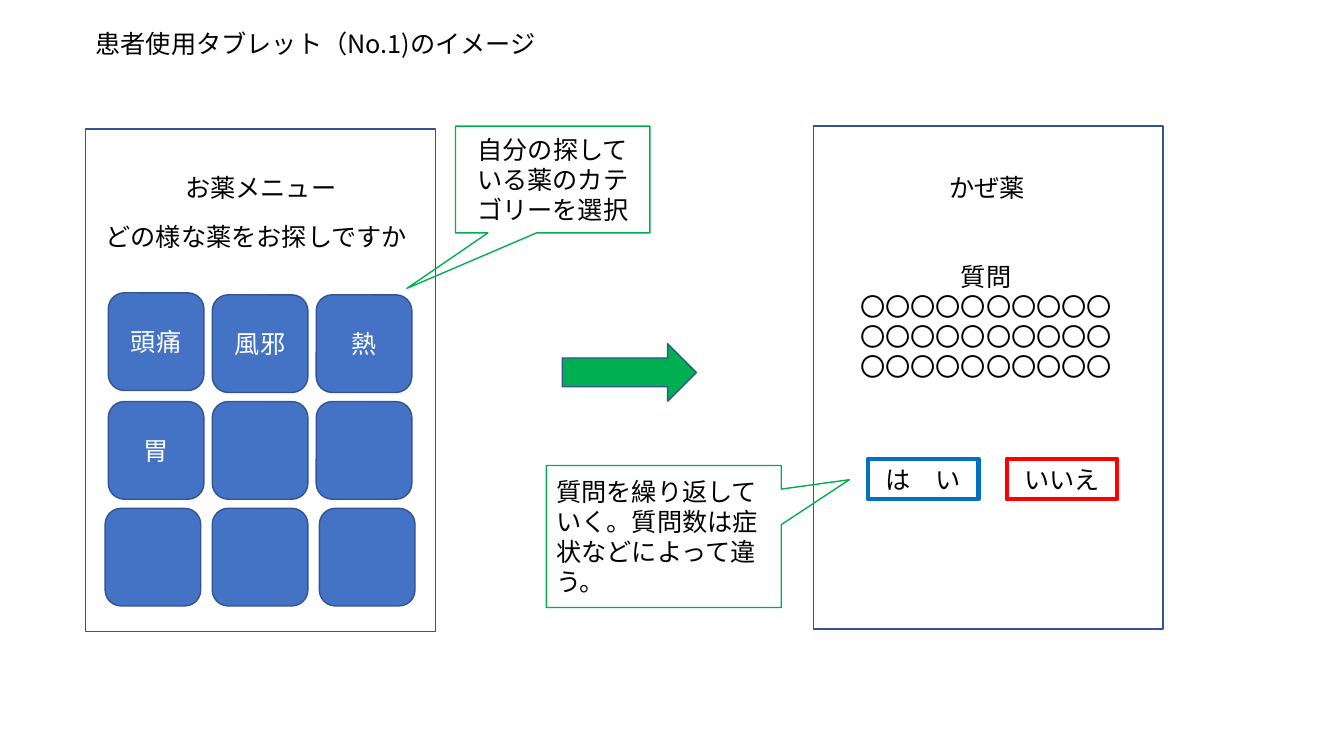
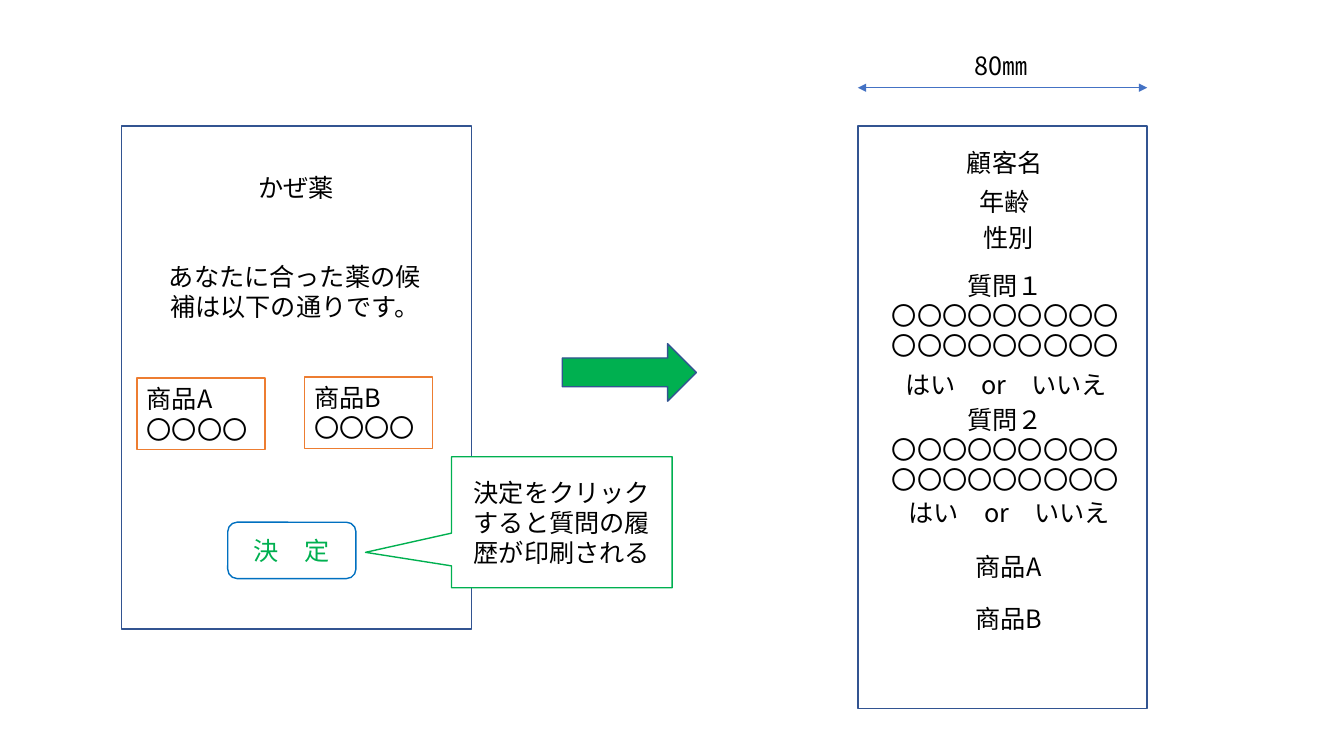
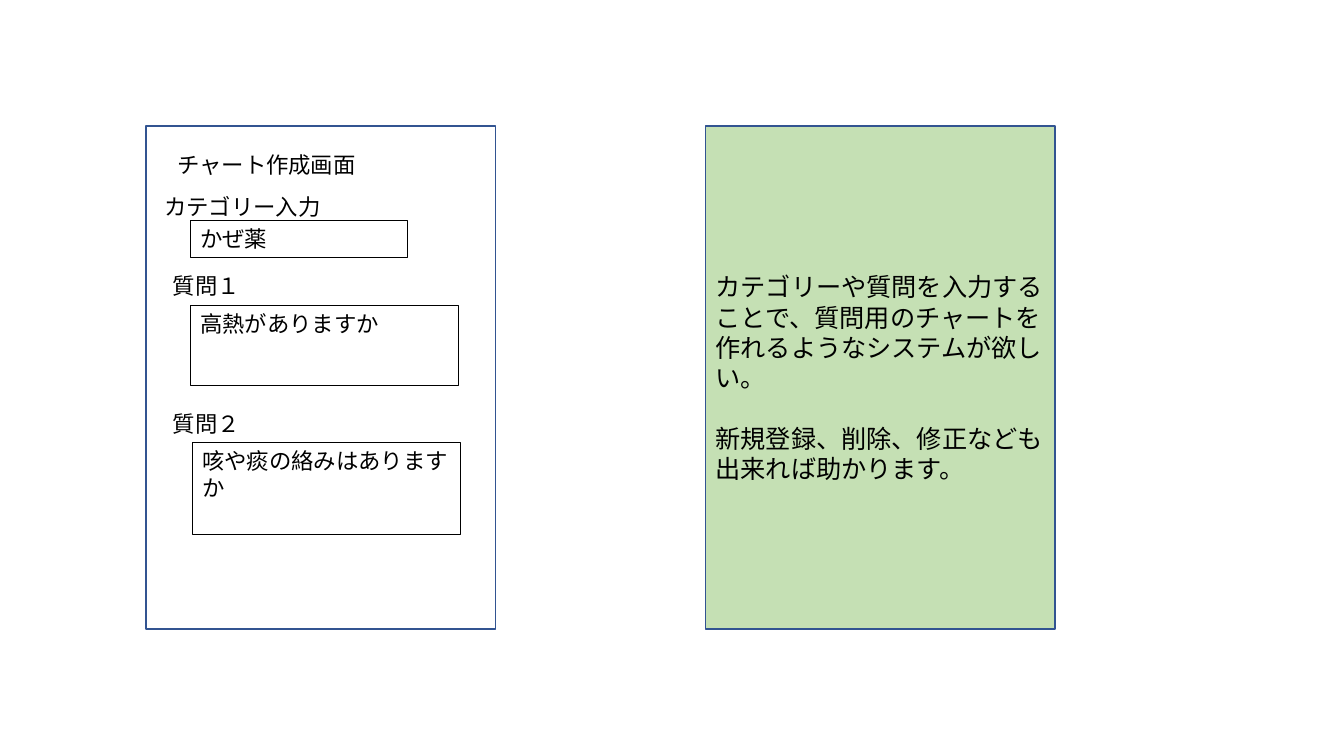
from dataclasses import dataclass
from typing import Optional

from lxml.etree import SubElement
from pptx import Presentation
from pptx.dml.color import RGBColor
from pptx.enum.shapes import MSO_CONNECTOR as Connector, MSO_SHAPE as Preset
from pptx.enum.text import MSO_ANCHOR as Anchor, PP_ALIGN as Align
from pptx.oxml.ns import qn
from pptx.slide import Slide
from pptx.util import Cm, Pt

FONT = "Noto Sans CJK JP"
BLACK = RGBColor(0x00, 0x00, 0x00)
WHITE = RGBColor(0xFF, 0xFF, 0xFF)
BLUE = RGBColor(0x44, 0x72, 0xC4)
NAVY = RGBColor(0x32, 0x54, 0x91)
SKY = RGBColor(0x00, 0x70, 0xC0)
GREEN = RGBColor(0x00, 0xB0, 0x50)
PALE_GREEN = RGBColor(0xC5, 0xE0, 0xB4)
RED = RGBColor(0xFF, 0x00, 0x00)
ORANGE = RGBColor(0xED, 0x7D, 0x31)

BODY_SIZE, FORM_SIZE = 18, 16
LINE_FACTOR = 1.2
LABEL_HEIGHT = 1.02
SCREEN_TOP, SCREEN_WIDTH, SCREEN_HEIGHT = 3.18, 8.81, 12.67


@dataclass
class Block:
    """A shape or, without a preset, a text box; lengths in centimetres."""
    left: float
    top: float
    width: float
    height: float = LABEL_HEIGHT
    text: str = ""
    align: Align = Align.CENTER
    size: int = BODY_SIZE
    color: RGBColor = BLACK
    preset: Optional[Preset] = None
    anchor: Anchor = Anchor.MIDDLE
    fill: Optional[RGBColor] = None
    line: RGBColor = NAVY
    weight: float = 1
    tip: Optional[tuple[float, float]] = None
    paragraph_gap: float = 0


def write_text(shape, block: Block) -> None:
    frame = shape.text_frame
    frame.word_wrap = True
    frame.vertical_anchor = block.anchor if block.preset else Anchor.TOP
    frame.text = block.text
    for number, paragraph in enumerate(frame.paragraphs):
        paragraph.alignment = block.align
        paragraph.line_spacing = Pt(block.size * LINE_FACTOR)
        if number and block.paragraph_gap:
            paragraph.space_before = Pt(block.paragraph_gap)
        for run in paragraph.runs:
            run.font.name = FONT
            run.font.size = Pt(block.size)
            run.font.color.rgb = block.color
            SubElement(run.font._element, qn("a:ea"), typeface=FONT)


def draw(slide: Slide, *blocks: Block) -> None:
    for block in blocks:
        place = [Cm(n) for n in (block.left, block.top, block.width, block.height)]
        if block.preset is None:
            shape = slide.shapes.add_textbox(*place)
        else:
            shape = slide.shapes.add_shape(block.preset, *place)
            shape.shadow.inherit = False
            shape.line.color.rgb = block.line
            shape.line.width = Pt(block.weight)
            if block.fill is None:
                shape.fill.background()
            else:
                shape.fill.solid()
                shape.fill.fore_color.rgb = block.fill
            if block.tip:
                shape.adjustments[0], shape.adjustments[1] = block.tip
        if block.text:
            write_text(shape, block)


def screen(left: float, top: float = SCREEN_TOP, **options) -> Block:
    return Block(left, top, SCREEN_WIDTH, SCREEN_HEIGHT,
                 preset=Preset.RECTANGLE, **options)


def callout(left: float, top: float, width: float, height: float, text: str,
            tip: tuple[float, float], **options) -> Block:
    return Block(left, top, width, height, text, tip=tip, line=GREEN,
                 preset=Preset.RECTANGULAR_CALLOUT, **options)


def next_arrow() -> Block:
    return Block(14.17, 8.66, 3.38, 1.45, preset=Preset.RIGHT_ARROW, fill=GREEN)


def answer_button(left: float, text: str, line: RGBColor) -> Block:
    return Block(left, 11.56, 2.79, text=text, preset=Preset.RECTANGLE,
                 line=line, weight=3)


def product_box(left: float, top: float, name: str) -> Block:
    return Block(left, top, 3.23, 1.8, f"{name}\n〇〇〇〇", Align.LEFT,
                 preset=Preset.RECTANGLE, fill=WHITE, line=ORANGE)


def form_label(left: float, top: float, width: float, text: str) -> Block:
    return Block(left, top, width, 0.94, text, Align.LEFT, FORM_SIZE)


def form_field(left: float, top: float, width: float, height: float,
               text: str) -> Block:
    return Block(left, top, width, height, text, Align.LEFT, FORM_SIZE,
                 preset=Preset.RECTANGLE, anchor=Anchor.TOP, line=BLACK, weight=0.75)


def menu_tiles() -> list[Block]:
    """Three rows of three medicine categories, some slightly off the grid."""
    names = ["頭痛", "風邪", "熱", "胃"] + [""] * 5
    nudges = {0: (0, -0.05), 6: (-0.08, 0), 8: (0.08, 0)}
    tiles = []
    for index, name in enumerate(names):
        row, column = divmod(index, 3)
        right, down = nudges.get(index, (0, 0))
        tiles.append(Block(2.73 + 2.62 * column + right, 7.43 + 2.69 * row + down,
                           2.41, 2.46, name, color=WHITE, fill=BLUE,
                           preset=Preset.ROUNDED_RECTANGLE))
    return tiles


def draw_dimension(slide: Slide, left: float, right: float, top: float) -> None:
    """Thin horizontal line with an arrowhead at each end."""
    connector = slide.shapes.add_connector(
        Connector.STRAIGHT, Cm(left), Cm(top), Cm(right), Cm(top))
    connector.line.color.rgb = BLUE
    connector.line.width = Pt(0.5)
    line = connector.line._get_or_add_ln()
    for end in ("a:headEnd", "a:tailEnd"):
        SubElement(line, qn(end), type="triangle")
    SubElement(connector._element.spPr, qn("a:effectLst"))


def draw_menu_slide(slide: Slide) -> None:
    draw(
        slide,
        screen(2.16, 3.25),
        Block(2.16, 0.58, 12.01, text="患者使用タブレット（No.1)のイメージ",
              align=Align.LEFT),
        *menu_tiles(),
        Block(3.05, 4.22, 7.04, text="お薬メニュー"),
        Block(2.41, 5.44, 8.33, text="どの様な薬をお探しですか", align=Align.LEFT),
        next_arrow(),
        screen(20.5),
        callout(11.48, 3.18, 4.9, 2.69, "自分の探している薬のカテゴリーを選択",
                (-0.75, 1.02)),
        Block(22.12, 4.22, 5.51, text="かぜ薬"),
        Block(21.41, 6.45, 6.88, 3.33, "質問\n" + "〇" * 30),
        answer_button(21.87, "は　い", SKY),
        answer_button(25.37, "いいえ", RED),
        callout(13.77, 11.73, 5.92, 3.58,
                "質問を繰り返していく。質問数は症状などによって違う。",
                (0.79, -0.4), align=Align.LEFT),
    )


def draw_receipt_slide(slide: Slide) -> None:
    receipt_left, receipt_width = 21.62, 7.29
    draw(
        slide,
        screen(3.07),
        Block(4.7, 4.22, 5.51, text="かぜ薬"),
        Block(3.99, 6.45, 6.88, 1.8, "あなたに合った薬の候補は以下の通りです。"),
        product_box(3.45, 9.53, "商品A"),
        product_box(7.67, 9.5, "商品B"),
        next_arrow(),
        Block(5.74, 13.16, 3.23, 1.42, "決　定", color=GREEN, line=SKY,
              preset=Preset.ROUNDED_RECTANGLE),
        callout(11.38, 11.51, 5.56, 3.3, "決定をクリックすると質問の履歴が印刷される",
                (-0.89, 0.23), fill=WHITE),
        Block(receipt_left, SCREEN_TOP, receipt_width, 14.68,
              preset=Preset.RECTANGLE),
        Block(23.93, 1.14, 2.62, text="80㎜"),
    )
    draw_dimension(slide, receipt_left, receipt_left + receipt_width, 2.21)
    for left, top, text in ((23.29, 3.58, "顧客名"), (23.29, 4.57, "年齢"),
                            (23.39, 5.49, "性別"), (23.39, 13.77, "商品A"),
                            (23.39, 15.09, "商品B")):
        draw(slide, Block(left, top, 4.06, text=text))
    for question_top, answer_left, answer_top, name in (
            (6.68, 22.25, 9.19, "質問１"), (10.06, 22.33, 12.4, "質問２")):
        draw(slide,
             Block(22.2, question_top, 6.27, 2.57, f"{name}\n" + "〇" * 18),
             Block(answer_left, answer_top, 6.22, text="はい　or　いいえ"))


def draw_form_slide(slide: Slide) -> None:
    draw(
        slide,
        screen(17.78, fill=PALE_GREEN, align=Align.LEFT, paragraph_gap=21.6,
               text="カテゴリーや質問を入力することで、質問用のチャートを"
                    "作れるようなシステムが欲しい。\n"
                    "新規登録、削除、修正なども出来れば助かります。"),
        screen(3.68),
        form_label(4.22, 3.68, 5.46, "チャート作成画面"),
        form_label(3.89, 4.75, 5.46, "カテゴリー入力"),
        form_field(4.8, 5.56, 5.46, 0.94, "かぜ薬"),
        form_label(4.11, 6.73, 2.49, "質問１"),
        form_field(4.8, 7.7, 6.76, 2.01, "高熱がありますか"),
        form_label(4.11, 10.21, 2.49, "質問２"),
        form_field(4.85, 11.15, 6.76, 2.31, "咳や痰の絡みはありますか"),
    )


def main() -> None:
    presentation = Presentation()
    presentation.slide_width, presentation.slide_height = Cm(33.87), Cm(19.05)
    blank = presentation.slide_layouts[6]
    for draw_slide in (draw_menu_slide, draw_receipt_slide, draw_form_slide):
        draw_slide(presentation.slides.add_slide(blank))
    presentation.save("out.pptx")


if __name__ == "__main__":
    main()
